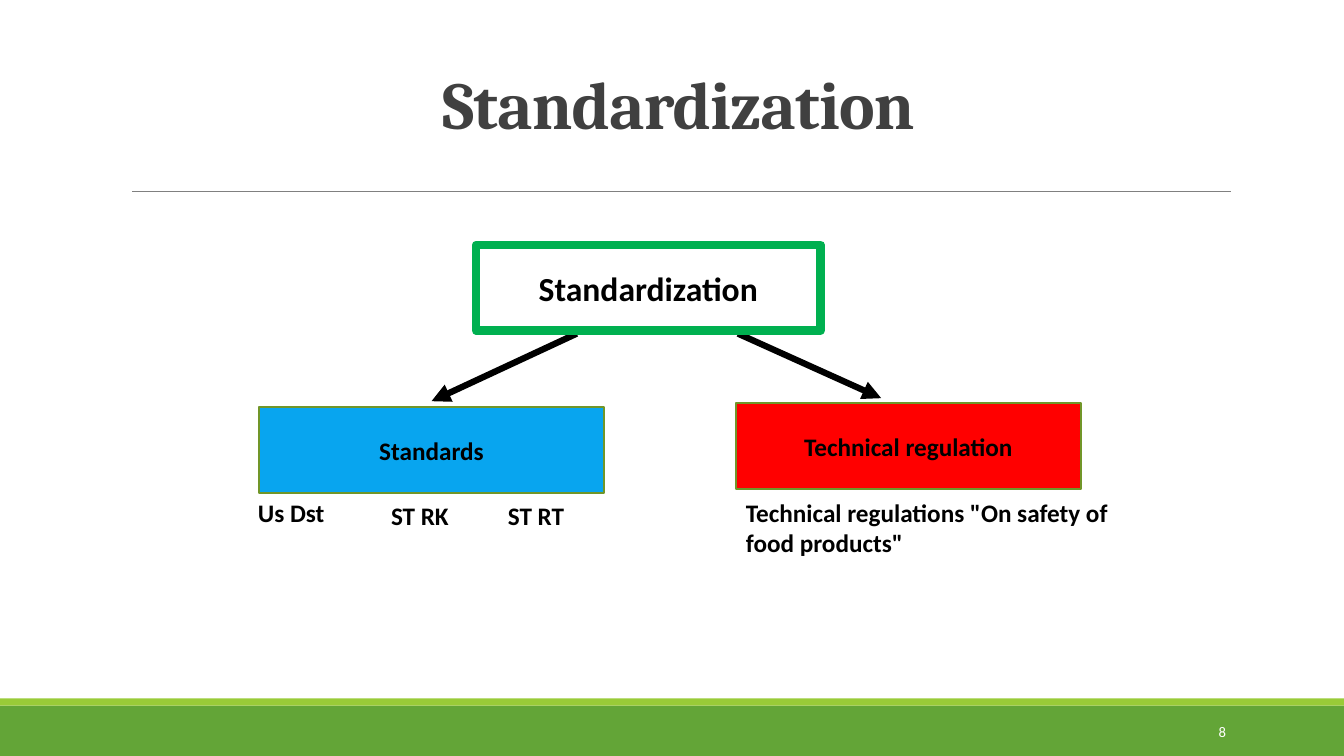
from lxml.etree import SubElement
from pptx import Presentation
from pptx.dml.color import RGBColor
from pptx.enum.shapes import MSO_CONNECTOR, MSO_SHAPE
from pptx.enum.text import MSO_ANCHOR, MSO_AUTO_SIZE, PP_ALIGN
from pptx.oxml.ns import qn
from pptx.util import Pt

PX = 9144  # 100 px to the inch


def color(value):
    return RGBColor.from_string(value)


def write(shape, text, size, align=PP_ALIGN.LEFT, anchor=MSO_ANCHOR.TOP,
          font="Calibri", ink="000000", bold=True, wrap=True):
    frame = shape.text_frame
    frame.auto_size = MSO_AUTO_SIZE.NONE
    frame.word_wrap = wrap
    frame.vertical_anchor = anchor
    paragraph = frame.paragraphs[0]
    paragraph.alignment = align
    run = paragraph.add_run()
    run.text = text
    run.font.name = font
    run.font.size = Pt(size)
    run.font.bold = bold
    run.font.color.rgb = color(ink)
    return paragraph, run


presentation = Presentation()
presentation.slide_width = 1333 * PX
presentation.slide_height = 750 * PX
slide = presentation.slides.add_slide(presentation.slide_layouts[5])

# Footer bands
for top, height, fill in [(700, 50, "63A537"), (693, 7, "99CB38")]:
    band = slide.shapes.add_shape(MSO_SHAPE.RECTANGLE, 0, top * PX, 1333 * PX, height * PX)
    band.shadow.inherit = False
    band.fill.solid()
    band.fill.fore_color.rgb = color(fill)
    band.line.fill.background()

# Title
title = slide.shapes.title
title.left, title.top, title.width, title.height = 123 * PX, -12 * PX, 1100 * PX, 159 * PX
paragraph, run = write(title, "Standardization", 48, PP_ALIGN.CENTER, MSO_ANCHOR.BOTTOM,
                       font="Cambria", ink="404040")
paragraph.line_spacing = 0.85
run.font._element.set("spc", "-50")

# Title rule and the two arrows
lines = [
    (131, 190, 1221, 190, "808080", 0.5, False),
    (572, 331, 428, 398, "000000", 4.5, True),
    (732, 331, 874, 395, "000000", 4.5, True),
]
for x1, y1, x2, y2, ink, weight, arrow in lines:
    connector = slide.shapes.add_connector(MSO_CONNECTOR.STRAIGHT, x1 * PX, y1 * PX, x2 * PX, y2 * PX)
    connector.line.color.rgb = color(ink)
    connector.line.width = Pt(weight)
    if arrow:
        SubElement(connector.line._get_or_add_ln(), qn("a:tailEnd"), type="triangle")
    SubElement(connector._element.spPr, qn("a:effectLst"))

# Boxes of the tree
boxes = [
    ("Standards", 257, 404, "08A5EF", "719629", 1.25, 18),
    ("Technical regulation", 730, 400, "FF0000", "719629", 1.25, 18),
    ("Standardization", 472, 243, "FFFFFF", "00B050", 6, 24),
]
for text, left, top, fill, outline, weight, size in boxes:
    box = slide.shapes.add_shape(MSO_SHAPE.RECTANGLE, left * PX, top * PX, 342 * PX, 85 * PX)
    box.shadow.inherit = False
    box.fill.solid()
    box.fill.fore_color.rgb = color(fill)
    box.line.color.rgb = color(outline)
    box.line.width = Pt(weight)
    write(box, text, size, PP_ALIGN.CENTER, MSO_ANCHOR.MIDDLE)

# Examples under the boxes
examples = [
    ("Technical regulations \"On safety of food products\"", 730, 488, 379, 71, True),
    ("Us Dst", 246, 488, 87, 40, False),
    ("ST RK", 378, 491, 78, 40, False),
    ("ST RT", 494, 491, 77, 40, False),
]
for text, left, top, width, height, wrap in examples:
    example = slide.shapes.add_textbox(left * PX, top * PX, width * PX, height * PX)
    write(example, text, 18, wrap=wrap)

# Slide number
number = slide.shapes.add_textbox(1083 * PX, 706 * PX, 143 * PX, 40 * PX)
write(number, "8", 10.5, PP_ALIGN.RIGHT, MSO_ANCHOR.MIDDLE, ink="FFFFFF", bold=False)

presentation.save("out.pptx")
